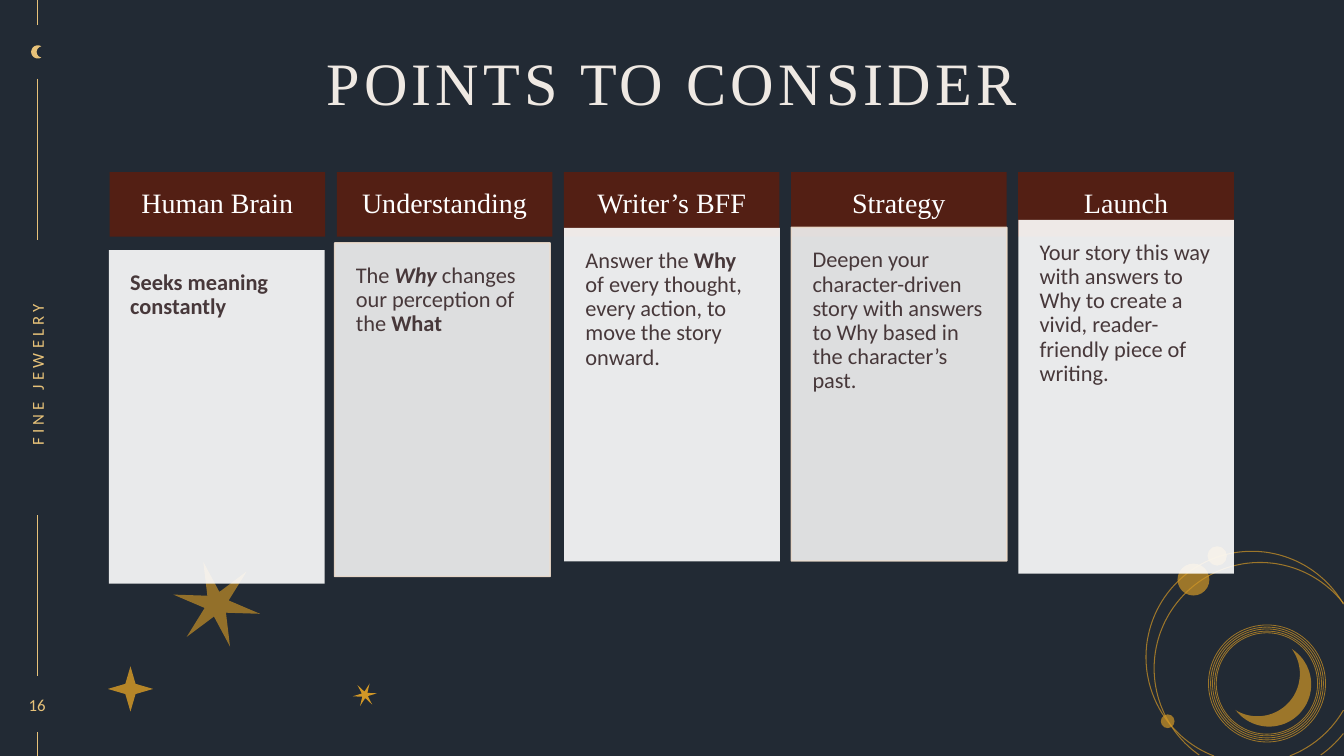
from dataclasses import dataclass
from itertools import groupby
from math import cos, radians, sin

from lxml.etree import SubElement
from pptx import Presentation
from pptx.dml.color import RGBColor
from pptx.dml.fill import FillFormat
from pptx.enum.shapes import MSO_CONNECTOR, MSO_SHAPE
from pptx.enum.text import MSO_ANCHOR as Anchor, PP_ALIGN as Align
from pptx.oxml.ns import qn
from pptx.shapes.autoshape import Shape
from pptx.text.text import TextFrame, _Paragraph as Para
from pptx.util import Pt

Spot = tuple[float, float]
WIDE, HIGH = 960, 540
SERIF, SANS = "Times New Roman", "Calibri"
NIGHT, CREAM, SAND, GOLD = "222A34", "EFE9E3", "E7C279", "D19726"
BRICK, WHITE, PALE, EDGE, INK = "531F14", "FFFFFF", "F2F2F2", "EEDDCD", "47383A"


@dataclass
class Run:
    text: str
    bold: bool = False
    slant: bool = False


@dataclass
class Card:
    head: str
    left: float
    top: float
    runs: list[Run]
    high: float = 238.3
    edged: bool = False


@dataclass
class Star:
    x: float
    y: float
    tip: float
    dent: float
    turn: float
    alpha: int


@dataclass
class Arc:
    x: float
    y: float
    r: float
    start: float
    stop: float


CARDS = [
    Card("Human Brain", 77.8, 178.6, [Run("Seeks meaning constantly", True)]),
    Card("Understanding", 239, 173.5,
         [Run("The "), Run("Why", True, True),
          Run(" changes our perception of the "), Run("What", True)], edged=True),
    Card("Writer’s BFF", 403, 162.7,
         [Run("Answer the "), Run("Why", True),
          Run(" of every thought, every action, to move the story onward.")]),
    Card("Strategy", 565.2, 162.4,
         [Run("Deepen your character-driven story with answers to Why "
              "based in the character’s past.")], edged=True),
    Card("Launch", 727.4, 157,
         [Run("Your story this way with answers to Why to create a vivid, "
              "reader-friendly piece of writing.")], high=252.7),
]
STARS = [Star(154.8, 431.6, 31.7, 9, 12.5, 65), Star(260.6, 496.3, 8.7, 2.3, -7, 100)]
RAILS = [(0, 18.2), (56.2, 171.4), (367.9, 483.1), (522.7, HIGH)]
ORBITS = [(894.2, 469.4), (900, 477.4)]
RINGS = [36.2, 37.4, 38.9, 40.3, 41.8]
DOTS = [(852.5, 414, 11.4), (869.4, 397.1, 6.9), (834.1, 515.2, 4.9)]

deck = Presentation()
deck.slide_width, deck.slide_height = Pt(WIDE), Pt(HIGH)
slide = deck.slides.add_slide(deck.slide_layouts[5])
shapes = slide.shapes


def paint(fill: FillFormat, tone: str) -> None:
    fill.solid()
    fill.fore_color.rgb = RGBColor.from_string(tone)


def style(shape: Shape, fill: str = "", line: str = "",
          width: float = 1, alpha: int = 100) -> None:
    shape.shadow.inherit = False
    if fill:
        paint(shape.fill, fill)
    else:
        shape.fill.background()
    if line:
        paint(shape.line.fill, line)
        shape.line.width = Pt(width)
    else:
        shape.line.fill.background()
    if alpha < 100:
        for tint in shape.element.spPr.iter(qn("a:srgbClr")):
            SubElement(tint, qn("a:alpha")).set("val", str(alpha * 1000))


def add_run(para: Para, run: Run, face: str, size: float, tone: str, gap: int = 0) -> None:
    part = para.add_run()
    part.text = run.text
    font = part.font
    font.name, font.size = face, Pt(size)
    font.bold, font.italic = run.bold, run.slant
    paint(font.fill, tone)
    if gap:
        font._element.set("spc", str(gap * 100))


def set_frame(frame: TextFrame, inset: float, anchor: Anchor, align: Align,
              space: float = 1) -> Para:
    frame.word_wrap = True
    frame.margin_left = frame.margin_right = Pt(inset)
    frame.margin_top = frame.margin_bottom = Pt(inset)
    frame.vertical_anchor = anchor
    para = frame.paragraphs[0]
    para.alignment, para.line_spacing = align, space
    return para


def add_shape(kind: MSO_SHAPE, x: float, y: float, w: float, h: float) -> Shape:
    return shapes.add_shape(kind, Pt(x), Pt(y), Pt(w), Pt(h))


def add_disc(x: float, y: float, r: float) -> Shape:
    return add_shape(MSO_SHAPE.OVAL, x - r, y - r, 2 * r, 2 * r)


def add_path(spots: list[Spot], close: bool = True) -> Shape:
    first, *rest = [(Pt(x), Pt(y)) for x, y in spots]
    pen = shapes.build_freeform(*first)
    pen.add_line_segments(rest, close=close)
    return pen.convert_to_shape()


def polar(x: float, y: float, r: float, turn: float) -> Spot:
    return x + r * cos(radians(turn)), y + r * sin(radians(turn))


def sweep(arc: Arc, steps: int = 40) -> list[Spot]:
    step = (arc.stop - arc.start) / steps
    return [polar(arc.x, arc.y, arc.r, arc.start + step * i) for i in range(steps + 1)]


def add_star(star: Star) -> None:
    spots = [polar(star.x, star.y, star.dent if i % 2 else star.tip, star.turn + 30 * i)
             for i in range(12)]
    style(add_path(spots), GOLD, alpha=star.alpha)


def add_moon(outer: Arc, inner: Arc, tone: str, alpha: int = 100) -> None:
    style(add_path(sweep(outer) + sweep(inner)), tone, alpha=alpha)


def inside(spot: Spot) -> bool:
    return spot[0] <= WIDE and spot[1] <= HIGH


def add_label(text: str, x: float, y: float, w: float, turn: float = 0, gap: int = 0) -> None:
    box = shapes.add_textbox(Pt(x), Pt(y), Pt(w), Pt(14.4))
    box.rotation = turn
    para = set_frame(box.text_frame, 0, Anchor.MIDDLE, Align.CENTER)
    add_run(para, Run(text), SANS, 12, SAND, gap)


def add_card(card: Card, spot: int) -> None:
    head = add_shape(MSO_SHAPE.RECTANGLE, 78.3 + 162.25 * spot, 123, 154, 46)
    style(head, BRICK)
    para = set_frame(head.text_frame, 12.2, Anchor.MIDDLE, Align.CENTER, 0.9)
    add_run(para, Run(card.head), SERIF, 20, WHITE)
    body = add_shape(MSO_SHAPE.RECTANGLE, card.left, card.top, 154, card.high)
    style(body, PALE if card.edged else WHITE, EDGE if card.edged else "", alpha=90)
    para = set_frame(body.text_frame, 15.2, Anchor.TOP, Align.LEFT, 0.9)
    for run in card.runs:
        add_run(para, run, SANS, 16, INK)


# Background and title
paint(slide.background.fill, NIGHT)
title = shapes.title
title.left, title.top, title.width, title.height = Pt(84), Pt(34.6), Pt(792), Pt(131.8)
line = set_frame(title.text_frame, 3.6, Anchor.TOP, Align.CENTER, 0.9)
add_run(line, Run("POINTS TO CONSIDER"), SERIF, 43, CREAM, 3)

# Stars
spark = add_shape(MSO_SHAPE.STAR_4_POINT, 77, 475.9, 32.4, 32.4)
spark.adjustments[0] = 0.16
style(spark, GOLD, alpha=85)
for star in STARS:
    add_star(star)

# Orbits, rings and crescent
for x, y in ORBITS:
    track = sweep(Arc(x, y, 75.6, 90, 450), 360)
    for shown, spots in groupby(track, inside):
        if shown:
            style(add_path(list(spots), False), line=GOLD, width=0.75, alpha=70)
for r in RINGS:
    style(add_disc(905, 488.2, r), line=GOLD, width=0.6, alpha=70)
for x, y, r in DOTS:
    style(add_disc(x, y, r), GOLD, alpha=70)
add_moon(Arc(906.5, 488.9, 30.1, -57.5, 143), Arc(898.2, 481.3, 30.3, 121, -35.5), GOLD, 70)

# Side rail
for top, end in RAILS:
    rail = shapes.add_connector(MSO_CONNECTOR.STRAIGHT, Pt(26.8), Pt(top), Pt(26.8), Pt(end))
    paint(rail.line.fill, SAND)
    rail.line.width = Pt(0.75)
    SubElement(rail.element.spPr, qn("a:effectLst"))
add_moon(Arc(27, 37.1, 4.7, -57.5, -302.5), Arc(30.2, 37.1, 4, 100, 260), SAND)
add_label("16", 12.2, 496.1, 28.8)
add_label("FINE JEWELRY", -74.2, 260.6, 201.6, 270, 3)

# Cards
for spot, card in enumerate(CARDS):
    add_card(card, spot)

deck.save("out.pptx")
